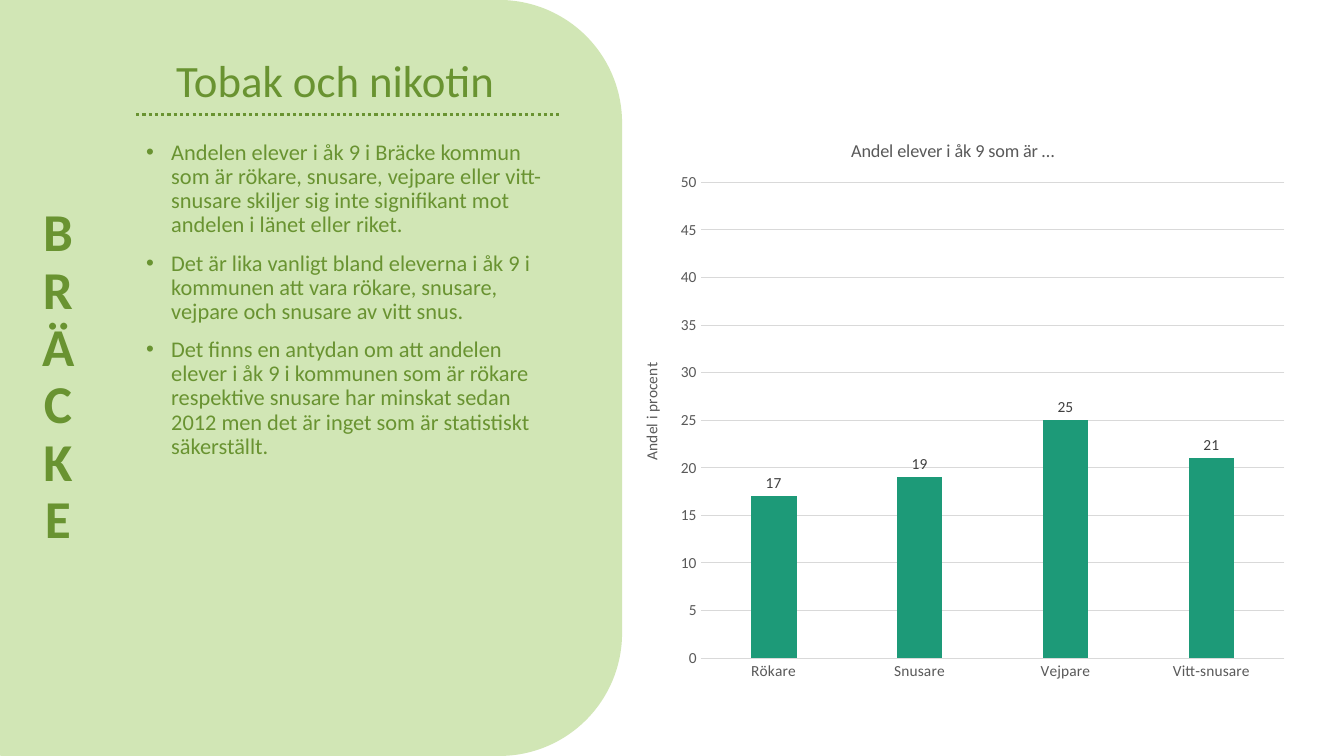
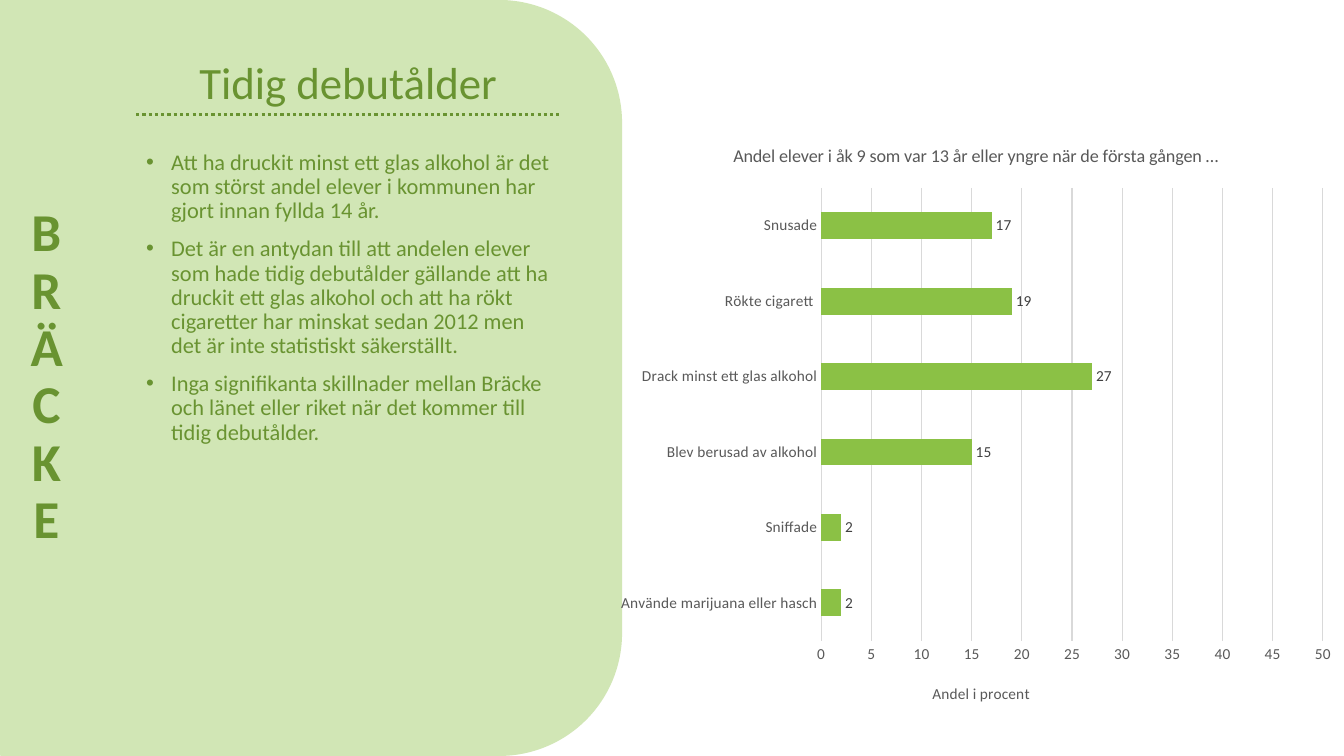
import lxml.etree
import pptx
import pptx.chart.data
import pptx.dml.color
import pptx.enum.chart
import pptx.enum.dml
import pptx.enum.shapes
import pptx.enum.text
import pptx.oxml.ns
import pptx.util

Inches = pptx.util.Inches
Pt = pptx.util.Pt
RGBColor = pptx.dml.color.RGBColor
qn = pptx.oxml.ns.qn
XL = pptx.enum.chart
ALIGN = pptx.enum.text.PP_ALIGN
ANCHOR = pptx.enum.text.MSO_ANCHOR

PALE_GREEN = RGBColor(0xD1, 0xE6, 0xB5)
DARK_GREEN = RGBColor(0x69, 0x93, 0x31)
TEAL = RGBColor(0x1D, 0x9A, 0x78)
LIME = RGBColor(0x8B, 0xC1, 0x45)
GRID_GREY = RGBColor(0xD9, 0xD9, 0xD9)
TEXT_GREY = RGBColor(0x59, 0x59, 0x59)
LABEL_GREY = RGBColor(0x40, 0x40, 0x40)

FONT = "Calibri"
TITLE = {"size": Pt(32), "name": FONT}
BODY = {"size": Pt(16), "name": FONT}
SIDE = {"size": Pt(38), "name": FONT, "bold": True}
CHART_TITLE = {"size": Pt(13), "name": FONT, "bold": False}
CHART_TEXT = {"size": Pt(11), "name": FONT, "bold": False}
CENTERED = {"alignment": ALIGN.CENTER, "line_spacing": 0.9}
BULLETED = {"alignment": ALIGN.LEFT, "line_spacing": 0.9, "space_before": Pt(10)}

SLIDES = [
    {
        "title": "Tobak och nikotin",
        "title_box": (1.19, 0.25, 4.27, 0.86),
        "side_box": (0.05, 0.06, 1.05, 7.38),
        "body_box": (1.35, 1.35, 4.21, 4.52),
        "points": [
            "Andelen elever i åk 9 i Bräcke kommun som är rökare, snusare, vejpare eller "
            "vitt-snusare skiljer sig inte signifikant mot andelen i länet eller riket.",
            "Det är lika vanligt bland eleverna i åk 9 i kommunen att vara rökare, snusare, "
            "vejpare och snusare av vitt snus.",
            "Det finns en antydan om att andelen elever i åk 9 i kommunen som är rökare "
            "respektive snusare har minskat sedan 2012 men det är inget som är statistiskt "
            "säkerställt.",
        ],
        "chart": {
            "kind": XL.XL_CHART_TYPE.COLUMN_CLUSTERED,
            "box": (6.16, 1.11, 6.71, 5.77),
            "plot_box": (0.79, 0.7, 5.79, 4.72),
            "title": "Andel elever i åk 9 som är …",
            "title_at": (2.25, 0.23),
            "axis_title_at": (0.17, 2.46),
            "axis_title_turn": -90,
            "color": TEAL,
            "bars": {"gap_width": 219, "overlap": -27},
            "data": {"Rökare": 17, "Snusare": 19, "Vejpare": 25, "Vitt-snusare": 21},
        },
    },
    {
        "title": "Tidig debutålder",
        "title_box": (1.58, 0.15, 3.75, 0.98),
        "side_box": (0, 0.06, 0.92, 7.38),
        "body_box": (1.35, 1.45, 4.21, 3.73),
        "points": [
            "Att ha druckit minst ett glas alkohol är det som störst andel elever i kommunen "
            "har gjort innan fyllda 14 år.",
            "Det är en antydan till att andelen elever som hade tidig debutålder gällande att "
            "ha druckit ett glas alkohol och att ha rökt cigaretter har minskat sedan 2012 men "
            "det är inte statistiskt säkerställt.",
            "Inga signifikanta skillnader mellan Bräcke och länet eller riket när det kommer "
            "till tidig debutålder.",
        ],
        "chart": {
            "kind": XL.XL_CHART_TYPE.BAR_CLUSTERED,
            "box": (6.16, 1.14, 7.17, 5.89),
            "plot_box": (1.96, 0.73, 5, 4.52),
            "title": "Andel elever i åk 9 som var 13 år eller yngre när de första gången …",
            "title_at": (1.05, 0.25),
            "axis_title_at": (3.04, 5.65),
            "axis_title_turn": 0,
            "color": LIME,
            "bars": {"gap_width": 182},
            "data": {
                "Använde marijuana eller hasch": 2,
                "Sniffade": 2,
                "Blev berusad av alkohol": 15,
                "Drack minst ett glas alkohol": 27,
                "Rökte cigarett ": 19,
                "Snusade": 17,
            },
        },
    },
]


def apply(obj, values):
    for name, value in values.items():
        setattr(obj, name, value)


def style_font(font, values, color):
    apply(font, values)
    font.color.rgb = color


def add_text(s, box, texts, font, para, anchor):
    sp = s.shapes.add_textbox(*map(Inches, box))
    tf = sp.text_frame
    apply(tf, {"word_wrap": True, "vertical_anchor": anchor})
    for i, text in enumerate(texts):
        p = tf.add_paragraph() if i else tf.paragraphs[0]
        apply(p, para)
        r = p.add_run()
        r.text = text
        style_font(r.font, font, DARK_GREEN)
    return sp


def add_panel(s, box):
    kind = pptx.enum.shapes.MSO_SHAPE.ROUNDED_RECTANGLE
    sp = s.shapes.add_shape(kind, *map(Inches, box))
    sp.shadow.inherit = False
    sp.fill.solid()
    sp.fill.fore_color.rgb = PALE_GREEN
    sp.line.fill.background()


def add_dotted_rule(s, left, top, width):
    ln = s.shapes.add_connector(
        pptx.enum.shapes.MSO_CONNECTOR.STRAIGHT,
        *map(Inches, (left, top, left + width, top)),
    )
    ln.line.color.rgb = DARK_GREEN
    apply(ln.line, {"width": Pt(2.25), "dash_style": pptx.enum.dml.MSO_LINE.ROUND_DOT})
    lxml.etree.SubElement(ln.element.spPr, qn("a:effectLst"))


def add_bullets(s, box, points):
    sp = add_text(s, box, points, BODY, BULLETED, ANCHOR.TOP)
    sp.fill.solid()
    sp.fill.fore_color.rgb = PALE_GREEN
    for pPr in sp.element.iter(qn("a:pPr")):
        pPr.set("marL", str(Inches(0.25)))
        pPr.set("indent", str(-Inches(0.25)))
        lxml.etree.SubElement(pPr, qn("a:buFont")).set("typeface", "Arial")
        lxml.etree.SubElement(pPr, qn("a:buChar")).set("char", "•")


def add_side_name(s, box):
    sp = add_text(s, box, ["BRÄCKE"], SIDE, CENTERED, ANCHOR.BOTTOM)
    sp.element.txBody.bodyPr.set("vert", "wordArtVert")


def place(element, part, size):
    old = element.find(qn("c:layout"))
    if old is not None:
        element.remove(old)
    layout = lxml.etree.Element(qn("c:layout"))
    manual = lxml.etree.SubElement(layout, qn("c:manualLayout"))
    values = {"xMode": "edge", "yMode": "edge"}
    if len(part) == 4:
        values = {"layoutTarget": "inner", **values}
    values.update((k, str(v / t)) for k, v, t in zip("xywh", part, size * 2))
    for tag, value in values.items():
        lxml.etree.SubElement(manual, qn("c:" + tag)).set("val", value)
    element.insert(0 if element.find(qn("c:tx")) is None else 1, layout)


def add_chart_text(title, text, font, at, size, turn=0):
    r = title.text_frame.paragraphs[0].add_run()
    r.text = text
    style_font(r.font, font, TEXT_GREY)
    body = title.element.find(".//" + qn("a:bodyPr"))
    body.set("rot", str(turn * 60000))
    body.set("vert", "horz")
    place(title.element, at, size)


def add_bar_chart(s, c):
    size = c["box"][2:]
    data = pptx.chart.data.CategoryChartData(number_format="0")
    data.categories = list(c["data"])
    data.add_series("Series 1", list(c["data"].values()))
    chart = s.shapes.add_chart(c["kind"], *map(Inches, c["box"]), data).chart
    apply(chart, {"has_legend": False, "has_title": True})
    style_font(chart.font, CHART_TEXT, TEXT_GREY)
    add_chart_text(chart.chart_title, c["title"], CHART_TITLE, c["title_at"], size)

    cat, val = chart.category_axis, chart.value_axis
    apply(cat, {"has_major_gridlines": False})
    apply(val, {"minimum_scale": 0, "maximum_scale": 50, "major_unit": 5,
                "has_major_gridlines": True, "has_title": True})
    apply(val.tick_labels, {"number_format": "0", "number_format_is_linked": False})
    for axis in (cat, val):
        apply(axis, {"major_tick_mark": XL.XL_TICK_MARK.NONE,
                     "minor_tick_mark": XL.XL_TICK_MARK.NONE})
        style_font(axis.tick_labels.font, CHART_TEXT, TEXT_GREY)
    for line in (cat.format.line, val.major_gridlines.format.line):
        line.color.rgb = GRID_GREY
        line.width = Pt(0.75)
    val.format.line.fill.background()
    add_chart_text(val.axis_title, "Andel i procent", CHART_TEXT,
                   c["axis_title_at"], size, c["axis_title_turn"])

    plot = chart.plots[0]
    apply(plot, {"vary_by_categories": False, "has_data_labels": True, **c["bars"]})
    fill = plot.series[0].format.fill
    fill.solid()
    fill.fore_color.rgb = c["color"]
    labels = plot.data_labels
    apply(labels, {"show_value": True, "number_format": "0",
                   "number_format_is_linked": False,
                   "position": XL.XL_LABEL_POSITION.OUTSIDE_END})
    style_font(labels.font, CHART_TEXT, LABEL_GREY)
    place(chart.element.find(".//" + qn("c:plotArea")), c["plot_box"], size)


def add_result_slide(prs, content):
    s = prs.slides.add_slide(prs.slide_layouts[6])
    add_panel(s, (-1.14, 0, 7.31, 7.5))
    add_text(s, content["title_box"], [content["title"]], TITLE, CENTERED, ANCHOR.BOTTOM)
    add_bullets(s, content["body_box"], content["points"])
    add_side_name(s, content["side_box"])
    add_bar_chart(s, content["chart"])
    add_dotted_rule(s, 1.35, 1.14, 4.21)


def main():
    prs = pptx.Presentation()
    apply(prs, {"slide_width": Inches(13.33), "slide_height": Inches(7.5)})
    for content in SLIDES:
        add_result_slide(prs, content)
    prs.save("out.pptx")


if __name__ == "__main__":
    main()
